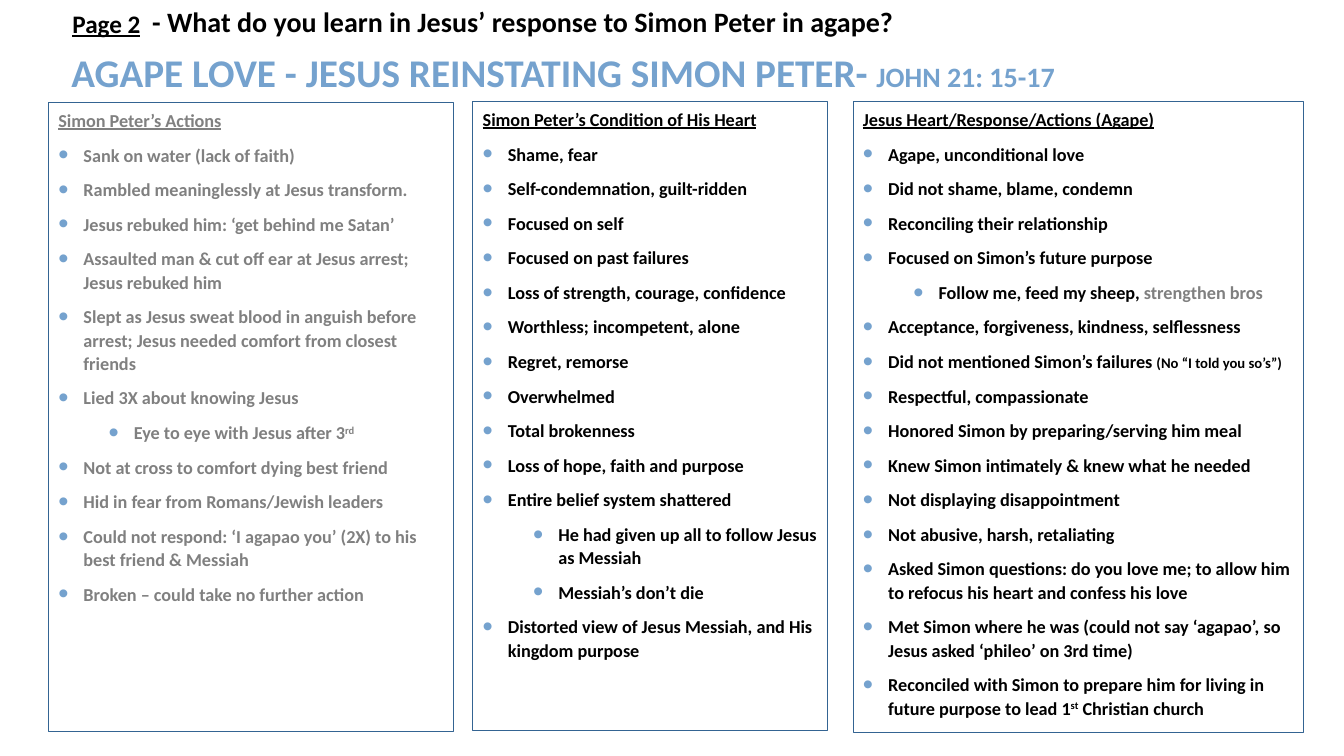
from dataclasses import dataclass
from typing import NamedTuple

from lxml.etree import SubElement
from pptx import Presentation
from pptx.dml.color import RGBColor
from pptx.enum.shapes import MSO_SHAPE as Preset
from pptx.enum.text import MSO_ANCHOR as Anchor, PP_ALIGN as Align
from pptx.oxml.ns import qn
from pptx.util import Inches, Pt

WIDTH, HEIGHT = Inches(13.33), Inches(7.5)
BLACK, GREY, WHITE, SKY, NAVY = "000000", "808080", "FFFFFF", "75A2CE", "346492"
BODY_SIZE = 13
BULLET_INDENT, LEVEL_STEP = WIDTH * 0.25 / 13.33, WIDTH * 0.5 / 13.33
PANEL_SPACING = {"line_spacing": 1.07, "space_after": Pt(8), "alignment": Align.LEFT}


class Area(NamedTuple):
    left: float
    top: float
    width: float
    height: float


class Span(NamedTuple):
    text: str
    size: float | None = None
    color: str | None = None
    underline: bool = False
    raised: bool = False


@dataclass
class Item:
    spans: list[Span]
    level: int = 0


@dataclass
class Label:
    area: Area
    spans: list[Span]
    anchor: Anchor = Anchor.TOP
    line_spacing: float = 1.0


@dataclass
class Panel:
    area: Area
    color: str
    heading: str
    items: list[str | Item]


LABELS = [
    Label(Area(4.58, 6.13, 88.45, 7.47), [
        Span("AGAPE LOVE - JESUS REINSTATING SIMON PETER- ", 28, SKY),
        Span("JOHN 21: 15-17", 20, SKY),
    ], Anchor.MIDDLE, 0.9),
    Label(Area(10.58, 0, 64.14, 5.87), [
        Span("- What do you learn in Jesus’ response to Simon Peter in agape?", 20),
    ]),
    Label(Area(4.65, 0.4, 7.43, 5.33), [Span("Page 2", 18, underline=True)]),
]

PANELS = [
    Panel(Area(3.6, 13.6, 30.16, 83.2), GREY, "Simon Peter’s Actions", [
        "Sank on water (lack of faith)",
        "Rambled meaninglessly at Jesus transform.",
        "Jesus rebuked him: ‘get behind me Satan’",
        "Assaulted man & cut off ear at Jesus arrest; Jesus rebuked him",
        "Slept as Jesus sweat blood in anguish before arrest; "
        "Jesus needed comfort from closest friends",
        "Lied 3X about knowing Jesus",
        Item([Span("Eye to eye with Jesus after 3"), Span("rd", raised=True)], 1),
        "Not at cross to comfort dying best friend",
        "Hid in fear from Romans/Jewish leaders",
        "Could not respond: ‘I agapao you’ (2X) to his best friend & Messiah",
        "Broken – could take no further action",
    ]),
    Panel(Area(35.18, 13.47, 26.41, 83.2), BLACK, "Simon Peter’s Condition of His Heart", [
        "Shame, fear",
        "Self-condemnation, guilt-ridden",
        "Focused on self",
        "Focused on past failures",
        "Loss of strength, courage, confidence",
        "Worthless; incompetent, alone",
        "Regret, remorse",
        "Overwhelmed",
        "Total brokenness",
        "Loss of hope, faith and purpose",
        "Entire belief system shattered",
        Item([Span("He had given up all to follow Jesus as Messiah")], 1),
        Item([Span("Messiah’s don’t die")], 1),
        "Distorted view of Jesus Messiah, and His kingdom purpose",
    ]),
    Panel(Area(63.47, 13.47, 33.53, 83.47), BLACK, "Jesus Heart/Response/Actions (Agape)", [
        "Agape, unconditional love",
        "Did not shame, blame, condemn",
        "Reconciling their relationship",
        "Focused on Simon’s future purpose",
        Item([Span("Follow me, feed my sheep, "), Span("strengthen bros", color=GREY)], 1),
        "Acceptance, forgiveness, kindness, selflessness",
        Item([Span("Did not mentioned Simon’s failures "),
              Span("(No “I told you so’s”)", 10.5)]),
        "Respectful, compassionate",
        "Honored Simon by preparing/serving him meal",
        "Knew Simon intimately & knew what he needed",
        "Not displaying disappointment",
        "Not abusive, harsh, retaliating",
        "Asked Simon questions: do you love me; "
        "to allow him to refocus his heart and confess his love",
        "Met Simon where he was (could not say ‘agapao’, so Jesus asked ‘phileo’ on 3rd time)",
        Item([Span("Reconciled with Simon to prepare him for living in future purpose to lead 1"),
              Span("st", raised=True), Span(" Christian church")]),
    ]),
]


def paint(target, color: str) -> None:
    target.rgb = RGBColor.from_string(color)


def place(area: Area) -> list[int]:
    sides = (WIDTH, HEIGHT, WIDTH, HEIGHT)
    return [round(side * share / 100) for side, share in zip(sides, area)]


def apply(target, values: dict) -> None:
    for name, value in values.items():
        setattr(target, name, value)


def write(para, spans: list[Span], color: str = BLACK) -> None:
    for part in spans:
        span = para.add_run()
        span.text = part.text
        apply(span.font, {
            "name": "Calibri", "size": Pt(part.size or BODY_SIZE),
            "bold": True, "underline": part.underline,
        })
        paint(span.font.color, part.color or color)
        if part.raised:
            span.font._element.set("baseline", "30000")


def add_bullet(para, level: int) -> None:
    para.level = level
    props = para._p.get_or_add_pPr()
    props.set("marL", str(round(BULLET_INDENT + level * LEVEL_STEP)))
    props.set("indent", str(-round(BULLET_INDENT)))
    SubElement(SubElement(props, qn("a:buClr")), qn("a:srgbClr"), val=SKY)
    SubElement(props, qn("a:buSzPct"), val="160000")
    SubElement(props, qn("a:buFont"), typeface="Arial")
    SubElement(props, qn("a:buChar"), char="•")


def draw_label(page, label: Label) -> None:
    box = page.shapes.add_textbox(*place(label.area))
    apply(box.text_frame, {"word_wrap": True, "vertical_anchor": label.anchor})
    para = box.text_frame.paragraphs[0]
    para.line_spacing = label.line_spacing
    write(para, label.spans)


def draw_panel(page, panel: Panel) -> None:
    box = page.shapes.add_shape(Preset.RECTANGLE, *place(panel.area))
    box.shadow.inherit = False
    box.fill.solid()
    paint(box.fill.fore_color, WHITE)
    paint(box.line.color, NAVY)
    box.line.width = Pt(0.75)
    frame = box.text_frame
    apply(frame, {"word_wrap": True, "vertical_anchor": Anchor.TOP})
    heading = frame.paragraphs[0]
    apply(heading, PANEL_SPACING)
    write(heading, [Span(panel.heading, underline=True)], panel.color)
    for entry in panel.items:
        item = Item([Span(entry)]) if isinstance(entry, str) else entry
        para = frame.add_paragraph()
        add_bullet(para, item.level)
        apply(para, PANEL_SPACING)
        write(para, item.spans, panel.color)


def main() -> None:
    deck = Presentation()
    apply(deck, {"slide_width": WIDTH, "slide_height": HEIGHT})
    page = deck.slides.add_slide(deck.slide_layouts[6])
    for panel in PANELS:
        draw_panel(page, panel)
    for label in LABELS:
        draw_label(page, label)
    deck.save("out.pptx")


if __name__ == "__main__":
    main()
